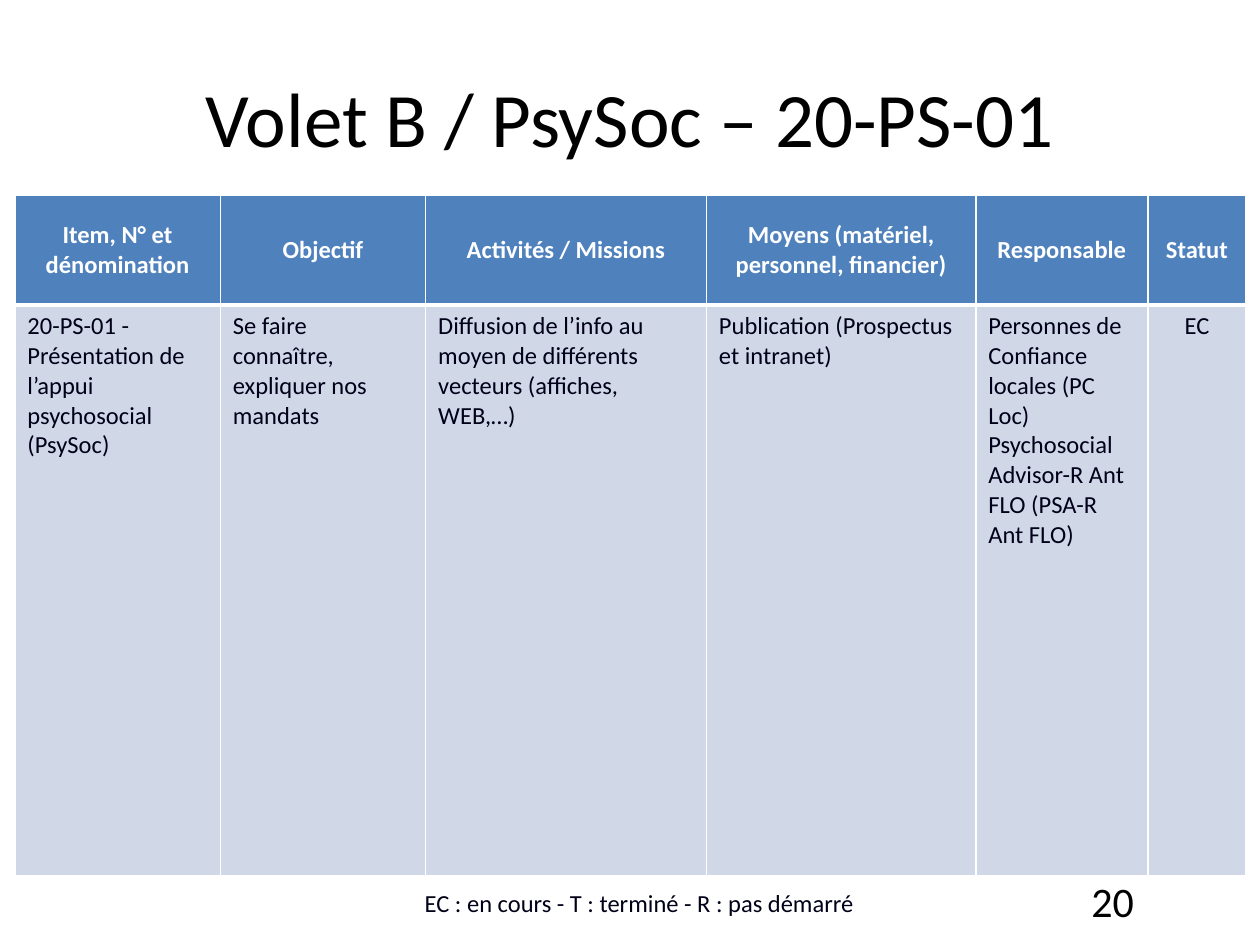
from lxml import etree
from pptx import Presentation
from pptx import util as u
from pptx.dml.color import RGBColor
from pptx.enum import text
from pptx.oxml.ns import qn

TITLE = "Volet B / PsySoc – 20-PS-01"
LEGEND = "EC : en cours - T : terminé - R : pas démarré"
PAGE = "20"
COLUMNS = [
    ("Item, N° et dénomination", 4.14,
     "20-PS-01 - Présentation de l’appui psychosocial (PsySoc)"),
    ("Objectif", 4.14, "Se faire connaître, expliquer nos mandats"),
    ("Activités / Missions", 5.66,
     "Diffusion de l’info au moyen de différents vecteurs (affiches, WEB,…)"),
    ("Moyens (matériel, personnel, financier)", 5.43,
     "Publication (Prospectus et intranet)"),
    ("Responsable", 3.47,
     "Personnes de Confiance locales (PC Loc) "
     "Psychosocial Advisor-R Ant FLO (PSA-R Ant FLO)"),
    ("Statut", 1.98, "EC"),
]
ROW_HEIGHTS = (2.21, 11.5)
TABLE_LEFT, TABLE_TOP = 0.3, 3.94

THEME = {
    "font": "Calibri",
    "title": 44, "page": 24, "body": 14,
    "black": "000000", "ink": "000018", "white": "FFFFFF",
    "header": "4F81BD", "cell": "D0D8E8",
    "thin": 1, "thick": 3,
}
ALIGN = text.PP_ALIGN
ANCHOR = text.MSO_ANCHOR


def write(tf, words, size, color, align, bold=False):
    p = tf.paragraphs[0]
    p.alignment = align
    r = p.add_run()
    r.text = words
    r.font.name = THEME["font"]
    r.font.size = u.Pt(THEME[size])
    r.font.bold = bold
    r.font.color.rgb = RGBColor.from_string(THEME[color])


def add_text(slide, box, words, size, color, align, anchor):
    tf = slide.shapes.add_textbox(*map(u.Cm, box)).text_frame
    tf.word_wrap = True
    tf.vertical_anchor = anchor
    write(tf, words, size, color, align)


def set_borders(cell, widths):
    tc_pr = cell._tc.get_or_add_tcPr()
    for side, width in zip("LRTB", widths):
        ln = etree.SubElement(tc_pr, qn(f"a:ln{side}"),
                              w=str(u.Pt(THEME[width])))
        fill = etree.SubElement(ln, qn("a:solidFill"))
        etree.SubElement(fill, qn("a:srgbClr"), val=THEME["white"])


def style_cell(cell, fill, anchor, borders):
    set_borders(cell, borders)
    cell.fill.solid()
    cell.fill.fore_color.rgb = RGBColor.from_string(THEME[fill])
    cell.vertical_anchor = anchor


def add_plan(slide):
    width = sum(w for _, w, _ in COLUMNS)
    table = slide.shapes.add_table(
        len(ROW_HEIGHTS), len(COLUMNS), u.Cm(TABLE_LEFT), u.Cm(TABLE_TOP),
        u.Cm(width), u.Cm(sum(ROW_HEIGHTS))).table
    for row, height in zip(table.rows, ROW_HEIGHTS):
        row.height = u.Cm(height)
    for i, (heading, width, body) in enumerate(COLUMNS):
        table.columns[i].width = u.Cm(width)
        head, cell = table.cell(0, i), table.cell(1, i)
        style_cell(head, "header", ANCHOR.MIDDLE,
                   ("thin", "thin", "thin", "thick"))
        write(head.text_frame, heading, "body", "white", ALIGN.CENTER, True)
        style_cell(cell, "cell", ANCHOR.TOP,
                   ("thin", "thin", "thick", "thin"))
        align = ALIGN.CENTER if heading == "Statut" else ALIGN.LEFT
        write(cell.text_frame, body, "body", "ink", align)


def main():
    prs = Presentation()
    prs.slide_width, prs.slide_height = u.Cm(25.4), u.Cm(19.05)
    s = prs.slides.add_slide(prs.slide_layouts[6])
    add_text(s, (1.27, 0.76, 22.86, 3.18), TITLE, "title", "black",
             ALIGN.CENTER, ANCHOR.MIDDLE)
    add_plan(s)
    add_text(s, (18.21, 17.65, 4.9, 1.02), PAGE, "page", "black",
             ALIGN.RIGHT, ANCHOR.MIDDLE)
    add_text(s, (5.89, 17.65, 14, 0.97), LEGEND, "body", "ink",
             ALIGN.CENTER, ANCHOR.BOTTOM)
    prs.save("out.pptx")


if __name__ == "__main__":
    main()
